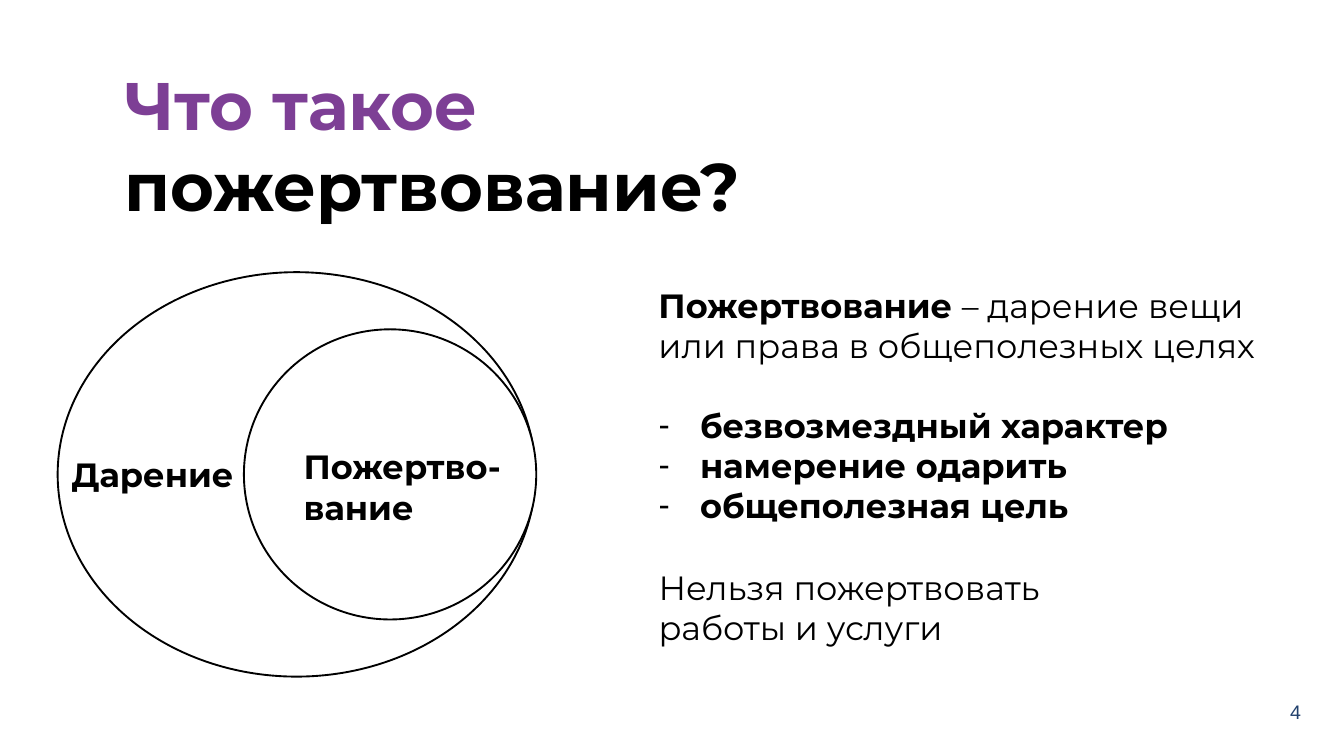
import pptx
import pptx.util
import pptx.dml.color
import pptx.enum.shapes
import pptx.enum.text
import pptx.oxml.ns
import lxml.etree
from dataclasses import dataclass

Cm, Pt = pptx.util.Cm, pptx.util.Pt
ALIGN = pptx.enum.text.PP_ALIGN
ANCHOR = pptx.enum.text.MSO_ANCHOR


@dataclass(frozen=True)
class Theme:
    font: str = "Montserrat"
    number_font: str = "Arial"
    accent: str = "7D3F95"
    ink: str = "000000"
    paper: str = "FFFFFF"
    number: str = "22416D"
    title_size: int = 72
    text_size: int = 36
    number_size: int = 21
    line_width: int = 2


THEME = Theme()

# Places are (left, top, width, height) in centimetres.
SLIDE_SIZE = (50.8, 28.58)
TITLE_PLACE = (4.32, 2.03, 35.38, 3.73)
LIST_PLACE = (24.64, 15.16, 20.4, 11.02)
DEFINITION_PLACE = (24.64, 10.64, 23.62, 3.33)
NUMBER_PLACE = (48.26, 26.09, 1.42, 1.65)
WIDE_INSET, SIDE_INSET, END_INSET = 0.38, 0.25, 0.13
BULLET_INDENT = 1.57
SECTION_GAP = 44

# A span is (text, bold).
TITLE = [("Что такое ", THEME.accent), ("пожертвование?", THEME.ink)]
DEFINITION = [("Пожертвование ", True), ("– дарение вещи или права в общеполезных целях", False)]
FEATURES = ["безвозмездный характер", "намерение одарить", "общеполезная цель"]
LIMITS = ["Нельзя пожертвовать", "работы и услуги"]
PAGE_NUMBER = "4"
CIRCLES = [(2.18, 10.29, 18.06, 15.29), (9.22, 12.45, 11.05, 10.97)]
CIRCLE_LABELS = [
    ((2.46, 17.02, 6.76, 1.8), ["Дарение"]),
    ((11.23, 16.74, 8.2, 3.33), ["Пожертво-", "вание"]),
]


def color(code):
    return pptx.dml.color.RGBColor.from_string(code)


def move(box, place):
    box.left, box.top, box.width, box.height = map(Cm, place)


def set_frame(box, side=SIDE_INSET, end=END_INSET, wrap=True, anchor=ANCHOR.TOP):
    frame = box.text_frame
    frame.auto_size = pptx.enum.text.MSO_AUTO_SIZE.NONE
    frame.word_wrap = wrap
    frame.vertical_anchor = anchor
    frame.margin_left = frame.margin_right = Cm(side)
    frame.margin_top = frame.margin_bottom = Cm(end)
    return frame


def add_text_box(page, place, **options):
    return set_frame(page.shapes.add_textbox(*map(Cm, place)), **options)


def add_span(para, text, bold=True, size=THEME.text_size, ink=THEME.ink, font=THEME.font):
    span = para.add_run()
    span.text = text
    span.font.name, span.font.size, span.font.bold = font, Pt(size), bold
    span.font.color.rgb = color(ink)


def next_para(frame, index, align=ALIGN.LEFT):
    para = frame.add_paragraph() if index else frame.paragraphs[0]
    para.alignment = align
    return para


def set_bullet(para, mark=None):
    """Give the paragraph a hanging mark, or none and no indent."""
    props = para._p.get_or_add_pPr()
    indent = Cm(BULLET_INDENT) if mark else 0
    props.set("marL", str(indent))
    props.set("indent", str(-indent))
    tag = "a:buChar" if mark else "a:buNone"
    bullet = lxml.etree.SubElement(props, pptx.oxml.ns.qn(tag))
    if mark:
        bullet.set("char", mark)


def fill_title(page):
    box = page.shapes.title
    move(box, TITLE_PLACE)
    para = next_para(set_frame(box, WIDE_INSET, WIDE_INSET), 0)
    for text, ink in TITLE:
        add_span(para, text, size=THEME.title_size, ink=ink)


def fill_list(page):
    box = page.placeholders[1]
    move(box, LIST_PLACE)
    frame = set_frame(box)
    lines = [(text, True) for text in FEATURES] + [(text, False) for text in LIMITS]
    for index, (text, is_feature) in enumerate(lines):
        para = next_para(frame, index)
        para.space_before = Pt(SECTION_GAP if index == len(FEATURES) else 0)
        set_bullet(para, "-" if is_feature else None)
        add_span(para, text, bold=is_feature)


def add_diagram(page):
    for place in CIRCLES:
        circle = page.shapes.add_shape(pptx.enum.shapes.MSO_SHAPE.OVAL, *map(Cm, place))
        circle.shadow.inherit = False
        circle.fill.solid()
        circle.fill.fore_color.rgb = color(THEME.paper)
        circle.line.color.rgb = color(THEME.ink)
        circle.line.width = Pt(THEME.line_width)
    for place, lines in CIRCLE_LABELS:
        frame = add_text_box(page, place, wrap=False)
        for index, text in enumerate(lines):
            add_span(next_para(frame, index), text)


def add_definition(page):
    para = next_para(add_text_box(page, DEFINITION_PLACE), 0)
    for text, bold in DEFINITION:
        add_span(para, text, bold)


def add_page_number(page):
    frame = add_text_box(page, NUMBER_PLACE, side=WIDE_INSET, end=WIDE_INSET, anchor=ANCHOR.MIDDLE)
    add_span(next_para(frame, 0, ALIGN.CENTER), PAGE_NUMBER, False,
             THEME.number_size, THEME.number, THEME.number_font)


def main():
    deck = pptx.Presentation()
    deck.slide_width, deck.slide_height = map(Cm, SLIDE_SIZE)
    page = deck.slides.add_slide(deck.slide_layouts[1])
    fill_title(page)
    fill_list(page)
    add_diagram(page)
    add_definition(page)
    add_page_number(page)
    deck.save("out.pptx")


if __name__ == "__main__":
    main()
